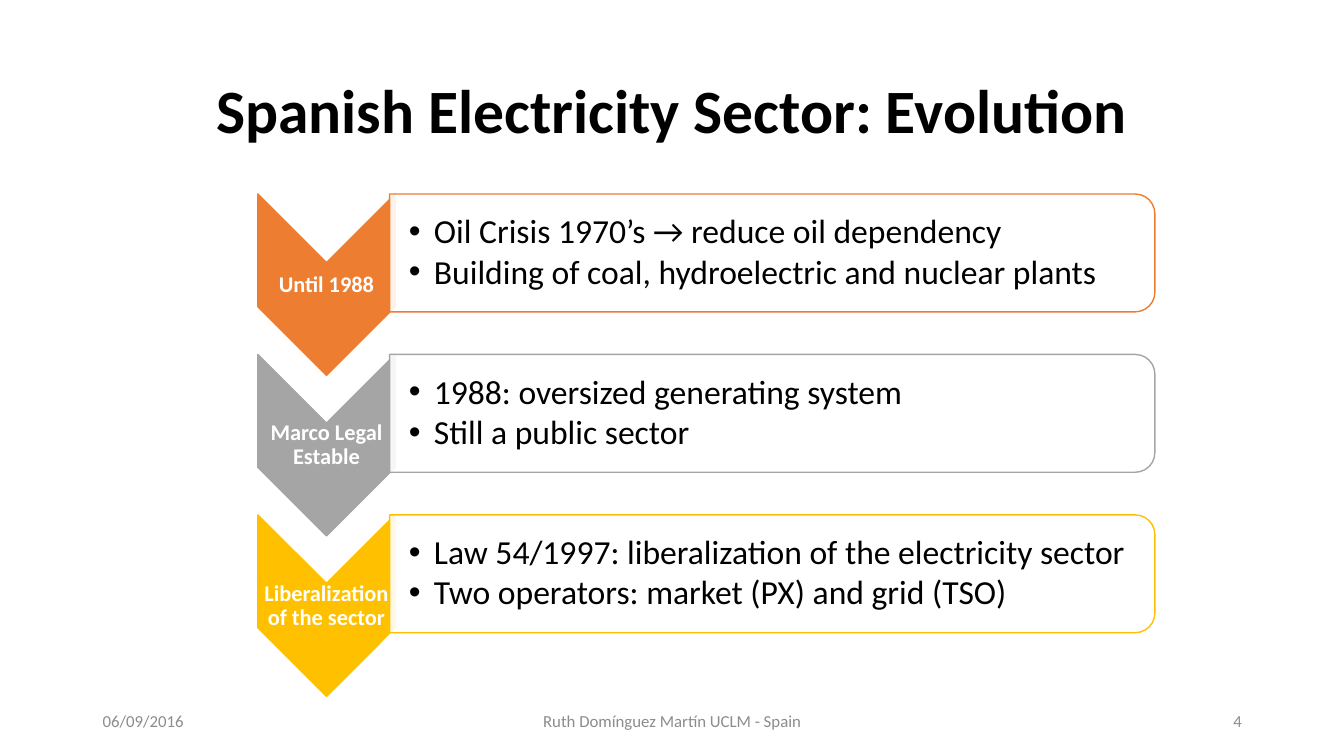
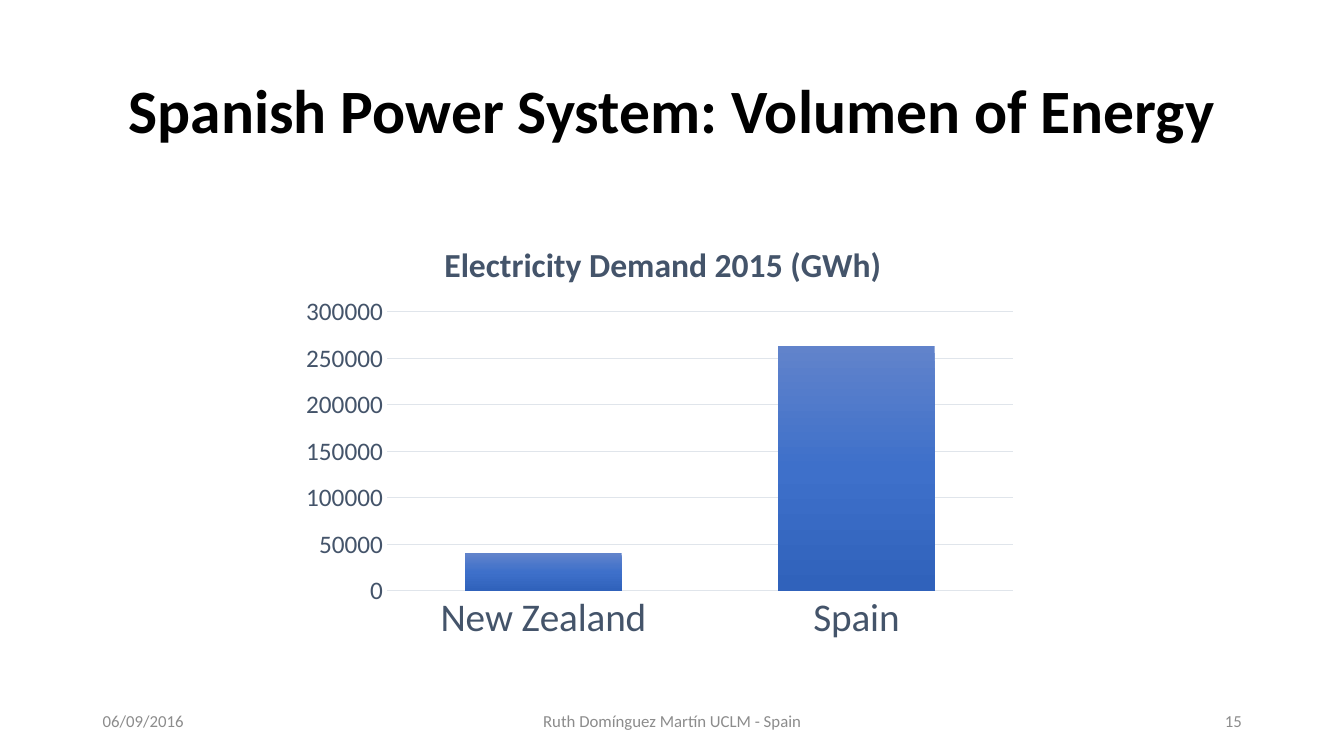
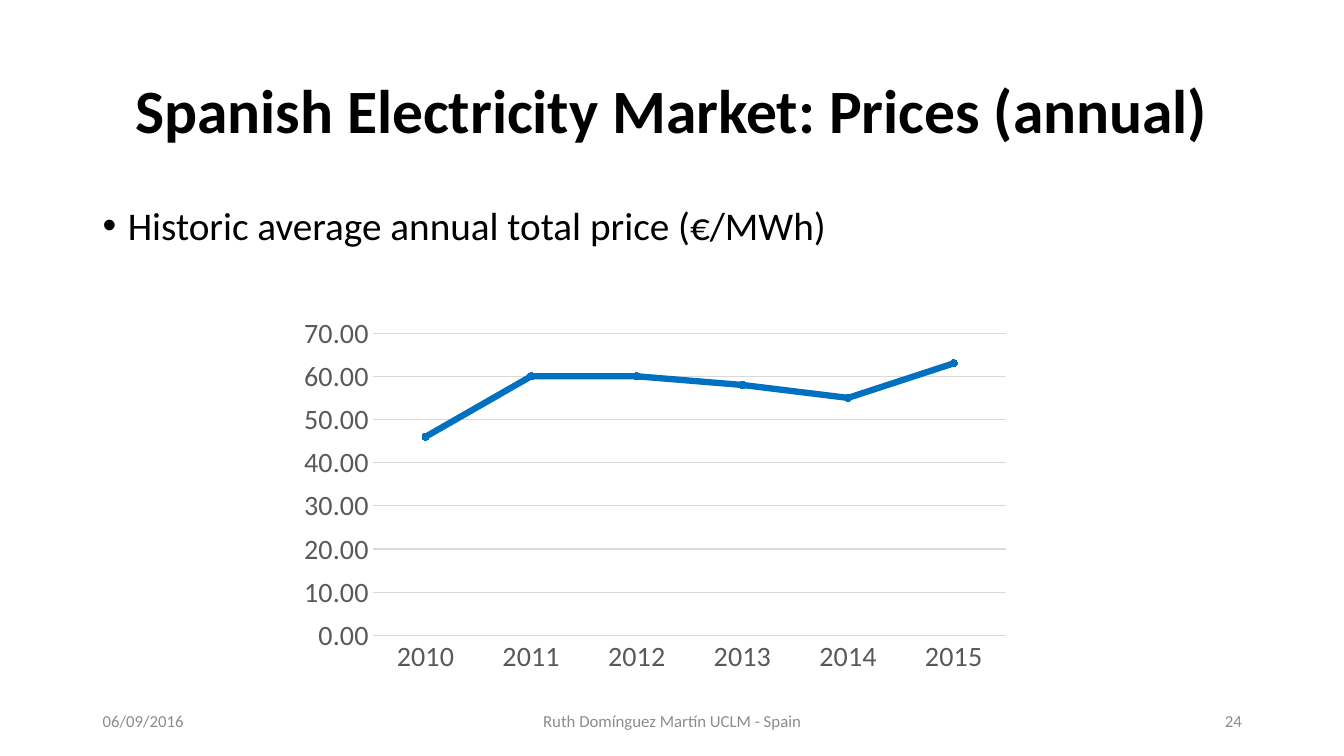
from copy import deepcopy

from lxml.etree import SubElement
from pptx import Presentation
from pptx.chart.data import CategoryChartData
from pptx.dml.color import RGBColor
from pptx.enum.chart import XL_CHART_TYPE, XL_MARKER_STYLE, XL_TICK_MARK
from pptx.enum.shapes import MSO_SHAPE
from pptx.enum.text import MSO_ANCHOR, PP_ALIGN
from pptx.oxml.ns import qn
from pptx.util import Pt

FONT = "Calibri"
BLACK = RGBColor(0x00, 0x00, 0x00)
WHITE = RGBColor(0xFF, 0xFF, 0xFF)
FOOTER_GREY = RGBColor(0x8C, 0x8C, 0x8C)
ORANGE = RGBColor(0xED, 0x7D, 0x31)
GREY = RGBColor(0xA5, 0xA5, 0xA5)
GOLD = RGBColor(0xFF, 0xC0, 0x00)
SLATE = RGBColor(0x44, 0x54, 0x6A)
PALE_SLATE = RGBColor(0xE0, 0xE5, 0xEB)
DARK_GREY = RGBColor(0x59, 0x59, 0x59)
PALE_GREY = RGBColor(0xD9, 0xD9, 0xD9)
PRICE_BLUE = RGBColor(0x00, 0x70, 0xC0)
MARKER_BLUE = RGBColor(0x5B, 0x9B, 0xD5)
DEMAND_GRADIENT = [
    (0, RGBColor(0x61, 0x83, 0xCB)),
    (0.5, RGBColor(0x3E, 0x70, 0xCA)),
    (1, RGBColor(0x30, 0x62, 0xBB)),
]

DATE = "06/09/2016"
AUTHOR = "Ruth Domínguez Martín UCLM - Spain"

PERIODS = [
    ("Until 1988", ORANGE, [
        "Oil Crisis 1970’s → reduce oil dependency",
        "Building of coal, hydroelectric and nuclear plants",
    ]),
    ("Marco Legal Estable", GREY, [
        "1988: oversized generating system",
        "Still a public sector",
    ]),
    ("Liberalization of the sector", GOLD, [
        "Law 54/1997: liberalization of the electricity sector",
        "Two operators: market (PX) and grid (TSO)",
    ]),
]
DEMAND_TITLE = "Electricity Demand 2015 (GWh)"
DEMAND = {"New Zealand": 40000, "Spain": 263000}
PRICE_HEADING = "Historic average annual total price (€/MWh)"
PRICES = {"2010": 46, "2011": 60, "2012": 60, "2013": 58, "2014": 55, "2015": 63}

MARGIN, CONTENT_WIDTH = 66.24, 828
FOOTER_TOP, FOOTER_HEIGHT = 500.4, 28.8
SIDE_WIDTH, AUTHOR_WIDTH = 216, 324
PERIOD_TOP, PERIOD_PITCH = 138.6, 114.6
CHEVRON_LEFT, CHEVRON_WIDTH, CHEVRON_HEIGHT = 184.2, 98, 129.6
BOX_LEFT, BOX_WIDTH, BOX_HEIGHT = 278.3, 546.6, 84.2


def style_font(font, size, color, bold=False):
    font.name = FONT
    font.size = Pt(size)
    font.color.rgb = color
    font.bold = bold


def add_bullet(paragraph):
    properties = paragraph._p.get_or_add_pPr()
    properties.set("marL", str(Pt(18)))
    properties.set("indent", str(-Pt(18)))
    SubElement(properties, qn("a:buFont"), typeface="Arial")
    SubElement(properties, qn("a:buChar"), char="•")


def add_text(slide, area, lines, size, color, bold=False, align=PP_ALIGN.LEFT,
             anchor=MSO_ANCHOR.MIDDLE, spacing=0.9, gap=0, bullets=False,
             insets=(7.2, 3.6, 7.2, 3.6)):
    frame = slide.shapes.add_textbox(*map(Pt, area)).text_frame
    frame.word_wrap = True
    frame.vertical_anchor = anchor
    (frame.margin_left, frame.margin_top,
     frame.margin_right, frame.margin_bottom) = map(Pt, insets)
    for index, line in enumerate(lines):
        paragraph = frame.add_paragraph() if index else frame.paragraphs[0]
        if bullets:
            add_bullet(paragraph)
        paragraph.alignment = align
        paragraph.line_spacing = spacing
        if index:
            paragraph.space_before = Pt(gap)
        run = paragraph.add_run()
        run.text = line
        style_font(run.font, size, color, bold)


def add_page(deck, title, number):
    slide = deck.slides.add_slide(deck.slide_layouts[6])
    add_text(slide, (MARGIN, 28.8, CONTENT_WIDTH, 104.4), [title], 44, BLACK,
             bold=True, align=PP_ALIGN.CENTER)
    right = MARGIN + CONTENT_WIDTH
    footers = [
        (DATE, MARGIN, SIDE_WIDTH, PP_ALIGN.LEFT),
        (AUTHOR, MARGIN + (CONTENT_WIDTH - AUTHOR_WIDTH) / 2, AUTHOR_WIDTH, PP_ALIGN.CENTER),
        (str(number), right - SIDE_WIDTH, SIDE_WIDTH, PP_ALIGN.RIGHT),
    ]
    for text, left, width, align in footers:
        add_text(slide, (left, FOOTER_TOP, width, FOOTER_HEIGHT), [text], 12,
                 FOOTER_GREY, align=align, spacing=1)
    return slide


def add_turned_shape(slide, kind, left, top, width, height, fill, line):
    shape = slide.shapes.add_shape(
        kind, Pt(left + (width - height) / 2), Pt(top + (height - width) / 2),
        Pt(height), Pt(width))
    shape.rotation = 90
    shape.shadow.inherit = False
    shape.fill.solid()
    shape.fill.fore_color.rgb = fill
    shape.line.color.rgb = line
    shape.line.width = Pt(1)
    return shape


def add_period(slide, top, label, color, points):
    add_turned_shape(slide, MSO_SHAPE.CHEVRON, CHEVRON_LEFT, top,
                     CHEVRON_WIDTH, CHEVRON_HEIGHT, color, color)
    add_text(slide, (CHEVRON_LEFT, top + 49, CHEVRON_WIDTH, 32), [label], 16, WHITE,
             bold=True, align=PP_ALIGN.CENTER, insets=(0.7, 0.7, 0.7, 0.7))
    box = add_turned_shape(slide, MSO_SHAPE.ROUND_2_SAME_RECTANGLE, BOX_LEFT, top,
                           BOX_WIDTH, BOX_HEIGHT, WHITE, color)
    box_color = box.fill._xPr.find(qn("a:solidFill"))[0]
    SubElement(box_color, qn("a:alpha"), val="90000")
    add_text(slide, (BOX_LEFT, top + 4, BOX_WIDTH - 4, BOX_HEIGHT - 8), points, 24,
             BLACK, gap=3, bullets=True, insets=(13.7, 1.4, 1.4, 1.4))


def set_layout(parent, index, inner=False, **places):
    for old in parent.findall(qn("c:layout")):
        parent.remove(old)
    layout = SubElement(parent, qn("c:layout"))
    parent.insert(index, layout)
    manual = SubElement(layout, qn("c:manualLayout"))
    if inner:
        SubElement(manual, qn("c:layoutTarget"), val="inner")
    for side in ("x", "y"):
        SubElement(manual, qn(f"c:{side}Mode"), val="edge")
    for key, value in places.items():
        SubElement(manual, qn(f"c:{key}"), val=str(value))


def add_chart(slide, kind, area, values, top_value, step, number_format,
              sizes, color, grid_color, plot):
    data = CategoryChartData()
    data.categories = list(values)
    data.add_series("Series 1", list(values.values()))
    chart = slide.shapes.add_chart(kind, *map(Pt, area), data).chart
    chart.has_legend = False
    chart.has_title = False
    style_font(chart.font, 10, BLACK)
    for axis, size in zip((chart.category_axis, chart.value_axis), sizes):
        axis.major_tick_mark = axis.minor_tick_mark = XL_TICK_MARK.NONE
        style_font(axis.tick_labels.font, size, color)
    value_axis = chart.value_axis
    value_axis.minimum_scale, value_axis.maximum_scale = 0, top_value
    value_axis.major_unit = step
    value_axis.tick_labels.number_format = number_format
    value_axis.tick_labels.number_format_is_linked = False
    value_axis.format.line.fill.background()
    value_axis.has_major_gridlines = True
    for line in (chart.category_axis.format.line, value_axis.major_gridlines.format.line):
        line.color.rgb = grid_color
        line.width = Pt(0.75)
    chart.plots[0].vary_by_categories = False
    set_layout(chart.element.find(".//" + qn("c:plotArea")), 0, inner=True,
               **dict(zip("xywh", plot)))
    return chart


def build_evolution(deck):
    slide = add_page(deck, "Spanish Electricity Sector: Evolution", 4)
    for index, period in enumerate(PERIODS):
        add_period(slide, PERIOD_TOP + index * PERIOD_PITCH, *period)


def build_demand(deck):
    slide = add_page(deck, "Spanish Power System: Volumen of Energy", 15)
    chart = add_chart(slide, XL_CHART_TYPE.COLUMN_CLUSTERED, (208, 152.6, 525.6, 313.2),
                      DEMAND, 300000, 50000, "General", (28, 18), SLATE, PALE_SLATE,
                      (0.13, 0.224, 0.851, 0.636))
    chart.has_title = True
    run = chart.chart_title.text_frame.paragraphs[0].add_run()
    run.text = DEMAND_TITLE
    style_font(run.font, 24, SLATE, bold=True)
    set_layout(chart.element.find(".//" + qn("c:title")), 1, x=0.2, y=0.05)
    plot = chart.plots[0]
    plot.gap_width, plot.overlap = 100, -24
    fill = plot.series[0].format.fill
    fill.gradient()
    fill.gradient_angle = 270
    stops = plot.series[0].format.fill._xPr.find(".//" + qn("a:gsLst"))
    stops.insert(1, deepcopy(stops[0]))
    for stop, (position, color) in zip(fill.gradient_stops, DEMAND_GRADIENT):
        stop.position = position
        stop.color.rgb = color


def build_prices(deck):
    slide = add_page(deck, "Spanish Electricity Market: Prices (annual)", 24)
    add_text(slide, (MARGIN, 144, CONTENT_WIDTH, 342.72), [PRICE_HEADING], 28, BLACK,
             anchor=MSO_ANCHOR.TOP, bullets=True)
    chart = add_chart(slide, XL_CHART_TYPE.LINE_MARKERS, (200.2, 186.5, 519.8, 299.5),
                      PRICES, 70, 10, "#,##0.00", (20, 20), DARK_GREY, PALE_GREY,
                      (0.127, 0.172, 0.871, 0.721))
    price = chart.plots[0].series[0]
    price.smooth = False
    price.format.line.color.rgb = PRICE_BLUE
    price.format.line.width = Pt(4.5)
    price.marker.style = XL_MARKER_STYLE.CIRCLE
    price.marker.size = 5
    price.marker.format.fill.solid()
    price.marker.format.fill.fore_color.rgb = MARKER_BLUE
    price.marker.format.line.color.rgb = PRICE_BLUE


def main():
    deck = Presentation()
    deck.slide_width, deck.slide_height = Pt(960), Pt(540)
    for build in (build_evolution, build_demand, build_prices):
        build(deck)
    deck.save("out.pptx")


if __name__ == "__main__":
    main()
